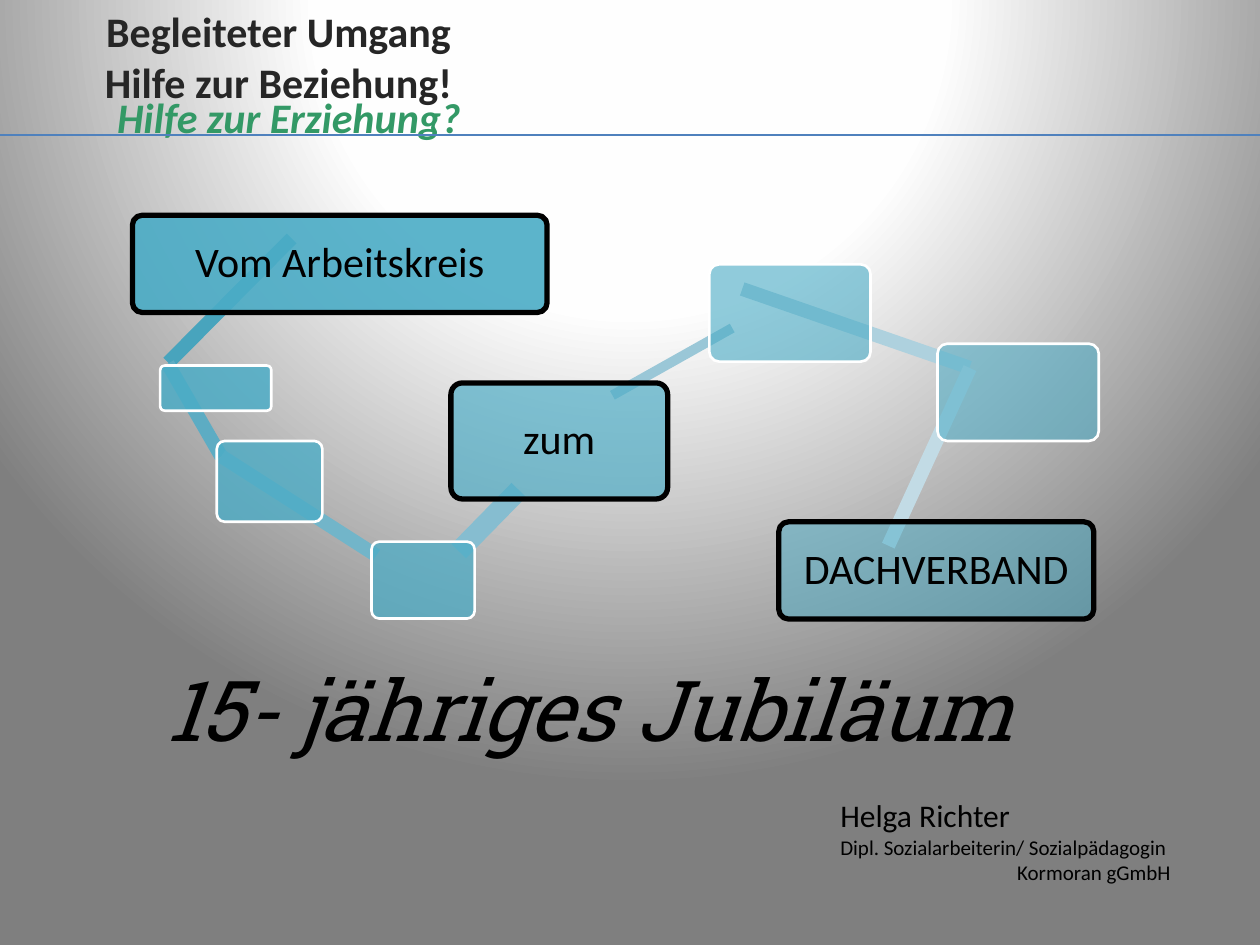
from lxml import etree
from pptx import Presentation
from pptx.dml.color import RGBColor
from pptx.enum import shapes, text
from pptx.oxml import ns, parse_xml
from pptx.util import Cm, Pt

HUES = {
    "ink": "000000", "title": "262626", "green": "339966", "rule": "4F81BD",
    "node": "4BACC6", "white": "FFFFFF", "near": "FEFEFE", "gray": "7F7F7F",
}
NODES = [
    (2.67, 4.34, 8.36, 1.96, "Vom Arbeitskreis"),
    (3.23, 7.37, 2.24, 0.91, ""),
    (4.37, 8.89, 2.13, 1.63, ""),
    (7.49, 10.92, 2.08, 1.55, ""),
    (9.09, 7.72, 4.37, 2.34, "zum"),
    (14.3, 5.33, 3.25, 1.96, ""),
    (18.9, 6.93, 3.25, 1.96, ""),
    (15.7, 10.52, 6.35, 1.96, "DACHVERBAND"),
]
BARS = [
    (2.87, 5.92, 3.53, 0.28, 134.8, "48A4BD"),
    (2.84, 8.13, 2.16, 0.28, 60, "5DACC3"),
    (4.17, 10.06, 3.71, 0.28, 32.6, "72B5C9"),
    (8.99, 10.29, 1.73, 0.41, 314.4, "86BDD0"),
    (12.17, 7.19, 2.77, 0.2, 330.7, "9AC7D7"),
    (14.83, 6.48, 4.85, 0.28, 19.1, "AED1DE"),
    (16.76, 9.07, 3.94, 0.28, 114.7, "C2DBE5"),
]


def rgb(key):
    """Return the colour for a palette name or a hex string."""
    return RGBColor.from_string(HUES.get(key, key))


def add_run(para, words, size, hue="ink", face="Calibri", bold=False, slant=False):
    """Append one formatted run to a paragraph."""
    run = para.add_run()
    run.text = words
    font = run.font
    font.size, font.name, font.bold, font.italic = Pt(size), face, bold, slant
    font.color.rgb = rgb(hue)


def set_back(slide):
    """Give the slide its circular gradient background."""
    stops = "".join(
        f'<a:gs pos="{pos * 1000}"><a:srgbClr val="{HUES[key]}"/></a:gs>'
        for pos, key in ((0, "white"), (40, "near"), (100, "gray")))
    back = parse_xml(
        f'<p:bg {ns.nsdecls("p", "a")}><p:bgPr>'
        f'<a:gradFill rotWithShape="1"><a:gsLst>{stops}</a:gsLst>'
        '<a:path path="circle"><a:fillToRect l="50000" t="-80000" r="50000" b="180000"/>'
        '</a:path></a:gradFill><a:effectLst/></p:bgPr></p:bg>')
    slide.element.find(ns.qn("p:cSld")).insert(0, back)


def set_title(slide):
    """Place and fill the two-line title."""
    title = slide.shapes.title
    title.left, title.top, title.width, title.height = Cm(0.51), Cm(0.53), Cm(10.21), Cm(2.21)
    frame = title.text_frame
    frame.auto_size = text.MSO_AUTO_SIZE.NONE
    frame.vertical_anchor = text.MSO_ANCHOR.MIDDLE
    frame.margin_top, frame.margin_bottom = Cm(0), Cm(1)
    para = frame.paragraphs[0]
    para.alignment = text.PP_ALIGN.CENTER
    add_run(para, "Begleiteter Umgang", 24, "title", bold=True)
    para.add_line_break()
    add_run(para, "Hilfe zur Beziehung!", 24, "title", bold=True)


def add_block(slide, kind, box, hue):
    """Add a plain filled shape without shadow."""
    block = slide.shapes.add_shape(kind, *map(Cm, box))
    block.shadow.inherit = False
    block.fill.solid()
    block.fill.fore_color.rgb = rgb(hue)
    return block


def add_bar(slide, *box, turn, hue):
    """Add a turned bar that links two nodes."""
    bar = add_block(slide, shapes.MSO_SHAPE.RECTANGLE, box, hue)
    bar.line.fill.background()
    bar.rotation = turn


def add_node(slide, *box, words, alpha):
    """Add a translucent rounded node, outlined in black when it has words."""
    node = add_block(slide, shapes.MSO_SHAPE.ROUNDED_RECTANGLE, box, "node")
    node.adjustments[0] = 0.1
    color = node.element.spPr.find(ns.qn("a:solidFill"))[0]
    etree.SubElement(color, ns.qn("a:alpha"), val=str(round(alpha * 1000)))
    node.line.color.rgb = rgb("ink" if words else "white")
    node.line.width = Pt(3 if words else 1.5)
    if words:
        frame = node.text_frame
        frame.word_wrap = True
        frame.vertical_anchor = text.MSO_ANCHOR.MIDDLE
        para = frame.paragraphs[0]
        para.alignment = text.PP_ALIGN.CENTER
        para.line_spacing = 0.9
        add_run(para, words, 24)


def add_chain(slide):
    """Draw the chain of nodes, each over the bar that leaves it."""
    last = len(NODES) - 1
    for i, (*box, words) in enumerate(NODES):
        if i < last:
            *place, turn, hue = BARS[i]
            add_bar(slide, *place, turn=turn, hue=hue)
        add_node(slide, *box, words=words, alpha=90 - 40 * i / last)


def add_text(slide, *box):
    """Add a wrapping text box and return its frame."""
    frame = slide.shapes.add_textbox(*map(Cm, box)).text_frame
    frame.word_wrap = True
    return frame


def add_author(slide):
    """Add the speaker's name, degree and employer."""
    frame = add_text(slide, 16.69, 15.93, 7.39, 2.06)
    frame.margin_right = Cm(0.48)
    add_run(frame.paragraphs[0], "Helga Richter", 18)
    add_run(frame.add_paragraph(), "Dipl. Sozialarbeiterin/ Sozialpädagogin", 12)
    para = frame.add_paragraph()
    para.alignment = text.PP_ALIGN.RIGHT
    add_run(para, "Kormoran gGmbH", 12)


def add_rule(slide, top, width):
    """Draw the line below the heading."""
    rule = slide.shapes.add_connector(
        shapes.MSO_CONNECTOR.STRAIGHT, Cm(0), Cm(top), width, Cm(top))
    rule.line.color.rgb = rgb("rule")
    rule.line.width = Pt(0.79)
    props = rule._element.find(ns.qn("p:spPr"))
    etree.SubElement(props, ns.qn("a:effectLst"))


def main():
    """Build and save the slide."""
    deck = Presentation()
    deck.slide_width, deck.slide_height = Cm(25.4), Cm(19.05)
    slide = deck.slides.add_slide(deck.slide_layouts[5])
    set_back(slide)
    set_title(slide)
    add_chain(slide)
    motto = add_text(slide, 2.11, 1.73, 9.8, 1.27)
    add_run(motto.paragraphs[0], "Hilfe zur Erziehung?", 24, "green", bold=True, slant=True)
    feast = add_text(slide, 3.1, 13.13, 18.39, 2.31)
    add_run(feast.paragraphs[0], "15- jähriges Jubiläum", 48, face="Roboto Slab", slant=True)
    add_author(slide)
    add_rule(slide, 2.72, deck.slide_width)
    deck.save("out.pptx")


if __name__ == "__main__":
    main()
